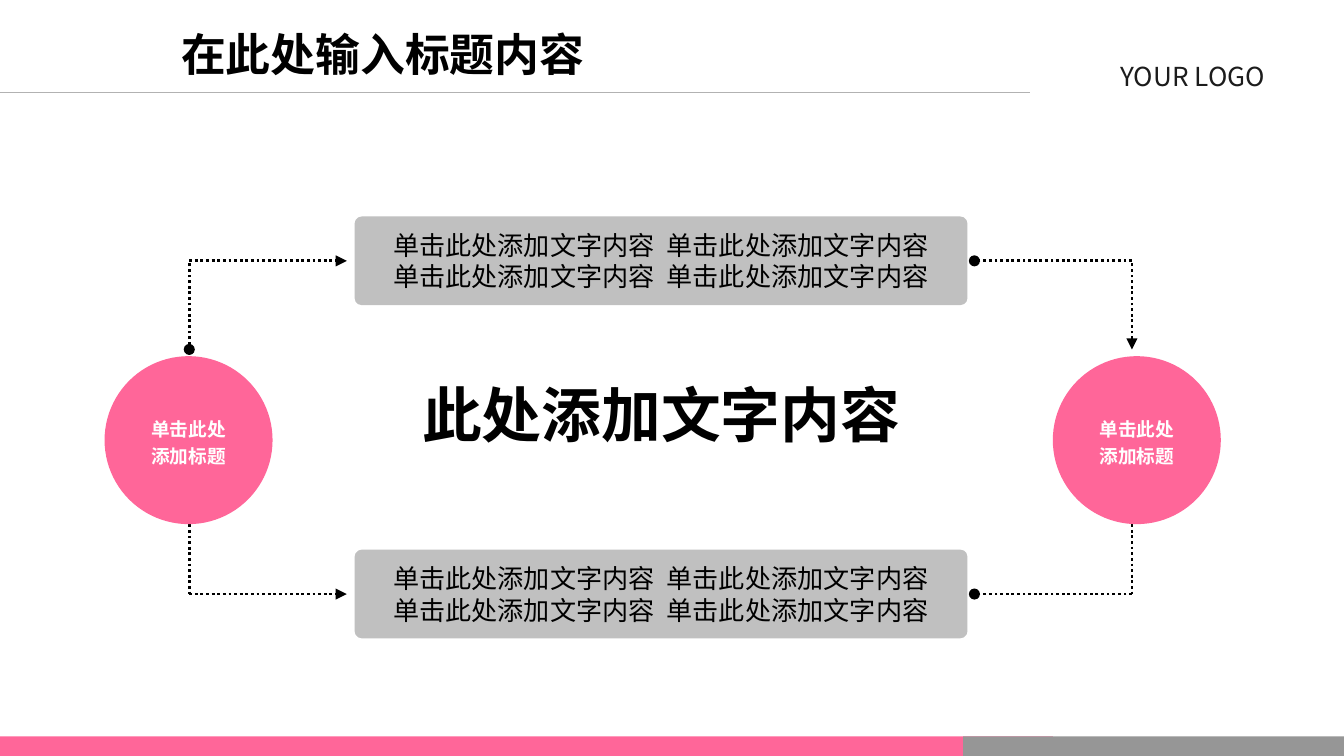
from lxml.etree import SubElement
from pptx import Presentation
from pptx.dml.color import RGBColor
from pptx.enum.dml import MSO_LINE_DASH_STYLE as Dash
from pptx.enum.shapes import MSO_CONNECTOR_TYPE as Link, MSO_SHAPE as Shape
from pptx.enum.text import MSO_ANCHOR as Anchor, PP_ALIGN as Align
from pptx.oxml.ns import qn
from pptx.util import Pt

PINK = RGBColor(0xFF, 0x66, 0x99)
SILVER = RGBColor(0xC0, 0xC0, 0xC0)
RULE_GRAY = RGBColor(0xB2, 0xB2, 0xB2)
FOOTER_GRAY = RGBColor(0x96, 0x96, 0x96)
INK = RGBColor(0x1C, 0x1C, 0x1C)
BLACK = RGBColor(0, 0, 0)
WHITE = RGBColor(0xFF, 0xFF, 0xFF)
SANS = "Noto Sans CJK SC"
SERIF = "Times New Roman"


class SlideBuilder:
    def __init__(self, page):
        self.page = page

    def label(self, box, lines, size, color, font=SANS, bold=False, spacing=None, wrap=True):
        frame = box.text_frame
        frame.word_wrap = wrap
        for index, line in enumerate(lines):
            para = frame.paragraphs[0] if index == 0 else frame.add_paragraph()
            para.alignment = Align.CENTER
            para.line_spacing = spacing
            span = para.add_run()
            span.text = line
            for name, value in {"size": Pt(size), "bold": bold, "name": font}.items():
                setattr(span.font, name, value)
            span.font.color.rgb = color
            SubElement(span.font._element, qn("a:ea"), typeface=SANS)

    def text(self, area, line, size, color, **style):
        box = self.page.shapes.add_textbox(*map(Pt, area))
        self.label(box, [line], size, color, **style)

    def shape(self, kind, area, fill, radius=None):
        box = self.page.shapes.add_shape(kind, *map(Pt, area))
        box.shadow.inherit = False
        box.fill.solid()
        box.fill.fore_color.rgb = fill
        box.line.fill.background()
        if radius is not None:
            box.adjustments[0] = radius
        box.text_frame.vertical_anchor = Anchor.MIDDLE
        return box

    def line(self, start, end, color=BLACK, width=1.5, dash=Dash.ROUND_DOT, head=None, tail=None):
        link = self.page.shapes.add_connector(Link.STRAIGHT, *map(Pt, (*start, *end)))
        link.line.color.rgb = color
        link.line.width = Pt(width)
        if dash:
            link.line.dash_style = dash
        properties = link._element.spPr
        outline = properties.find(qn("a:ln"))
        for tag, mark in (("a:headEnd", head), ("a:tailEnd", tail)):
            if mark:
                SubElement(outline, qn(tag), type=mark)
        SubElement(properties, qn("a:effectLst"))


def main():
    deck = Presentation()
    deck.slide_width, deck.slide_height = Pt(720), Pt(405)
    page = deck.slides.add_slide(deck.slide_layouts[6])
    builder = SlideBuilder(page)

    # Header and footer
    builder.line((0, 49.5), (552, 49.5), RULE_GRAY, 0.75, dash=None)
    builder.text((564, 28.8, 150, 24), "YOUR LOGO", 14, INK)
    builder.shape(Shape.RECTANGLE, (0, 394.5, 564, 10.5), PINK)
    builder.shape(Shape.RECTANGLE, (516, 394.5, 204, 10.5), FOOTER_GRAY)
    builder.text((66, 10.8, 278, 36), "在此处输入标题内容", 24, BLACK, font=SERIF, bold=True)

    # Dotted arrows: a riser at each circle and a branch to each bar
    bar_height = 47.5
    bar_tops = (116, 294.5)
    riser_starts = (187.2, 269.3)
    sides = ((101.4, 185.8, "oval", "triangle"), (606.4, 522, "triangle", "oval"))
    for riser_x, branch_x, circle_mark, bar_mark in sides:
        for top, riser_y in zip(bar_tops, riser_starts):
            corner = (riser_x, top + bar_height / 2)
            builder.line((riser_x, riser_y), corner, head=circle_mark)
            builder.line(corner, (branch_x, corner[1]), tail=bar_mark)

    # Text bars and the central heading
    bar_line = "单击此处添加文字内容  单击此处添加文字内容"
    for top in bar_tops:
        bar = builder.shape(Shape.ROUNDED_RECTANGLE, (190, top, 328.3, bar_height), SILVER, 0.08)
        builder.label(bar, [bar_line] * 2, 14, BLACK, wrap=False)
    builder.text((219, 198.7, 270.7, 45.4), "此处添加文字内容", 32, BLACK, bold=True, wrap=False)

    # Circles, in front of the arrows
    for left in (56, 564):
        circle = builder.shape(Shape.OVAL, (left, 190.8, 90, 90), PINK)
        builder.label(circle, ["单击此处添加标题"], 10, WHITE, bold=True, spacing=1.2)

    deck.save("out.pptx")


if __name__ == "__main__":
    main()
